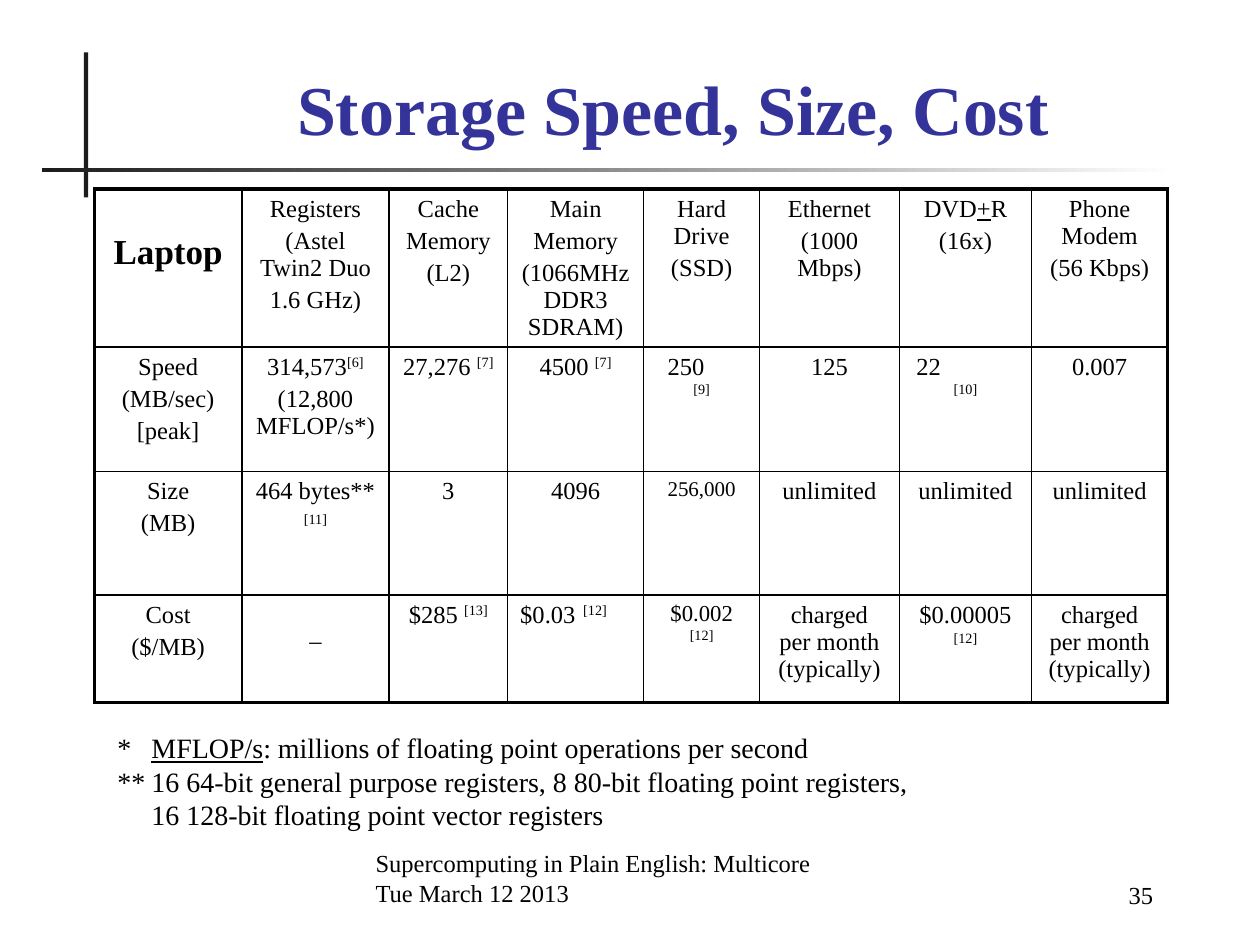
from lxml.etree import SubElement as Sub
from pptx import Presentation
from pptx.dml.color import RGBColor as RGB
from pptx.enum.shapes import MSO_SHAPE as Kind
from pptx.enum.text import MSO_ANCHOR as Anchor, MSO_AUTO_SIZE as Fit, PP_ALIGN as Align
from pptx.oxml.ns import qn
from pptx.util import Pt

INK = RGB(0x00, 0x00, 0x00)
DARK = RGB(0x1C, 0x1C, 0x1C)
BLUE = RGB(0x33, 0x33, 0x99)
WHITE = RGB(0xFF, 0xFF, 0xFF)
FACE = "Times New Roman"

COLS = [84.2, 84.2, 67.7, 77.8, 66.2, 79.9, 75.6, 77.8]
ROWS = [89.3, 71.3, 70.6, 61.2]
THIN, THICK = 1, 2.25


def ref(num):
    """Raised reference mark."""
    return f"[{num}]", {"sup": True}


# A cell is a list of paragraphs; a paragraph is a string or a list of runs,
# where a run is a string or a (text, format) pair.
CELLS = [
    [["Laptop"],
     ["Registers", "(Astel\nTwin2 Duo", "1.6 GHz)"],
     ["Cache", "Memory", "(L2)"],
     ["Main", "Memory", "(1066MHz DDR3 SDRAM)"],
     ["Hard Drive", "(SSD)"],
     ["Ethernet", "(1000 Mbps)"],
     [["DVD", ("+", {"line": True}), "R"], "(16x)"],
     ["Phone Modem", "(56 Kbps)"]],
    [["Speed", "(MB/sec)", "[peak]"],
     [["314,573", ref(6)], "(12,800 MFLOP/s*)"],
     [["27,276 ", ref(7)]],
     [["4500 ", ref(7)]],
     ["250", [ref(9)]],
     ["125"],
     ["22", [ref(10)]],
     ["0.007"]],
    [["Size", "(MB)"],
     ["464 bytes**", [ref(11)]],
     ["3"],
     ["4096"],
     [[("256,000", {"size": 12})]],
     ["unlimited"],
     ["unlimited"],
     ["unlimited"]],
    [["Cost", "($/MB)"],
     ["–"],
     [["$285 ", ref(13)]],
     [["$0.03\t", ref(12)]],
     [[("$0.002", {"size": 13}), "\n", ref(12)]],
     ["charged\nper month\n(typically)"],
     [["$0.00005\n", ref(12)]],
     ["charged per month (typically)"]],
]


def style(font, size, color, bold, line):
    font.name, font.size, font.bold = FACE, Pt(size), bold
    font.underline = line
    font.color.rgb = color


def add_run(para, text, size=14, color=INK, bold=False, line=False, sup=False):
    for i, part in enumerate(text.split("\n")):
        if i:
            para.add_line_break()
        if part:
            run = para.add_run()
            run.text = part
            style(run.font, size, color, bold, line)
            if sup:
                run._r.get_or_add_rPr().set("baseline", "30000")


def write(frame, paras, align=Align.LEFT, gap=0, **form):
    """Fill a text frame with paragraphs in one format."""
    for i, runs in enumerate(paras):
        para = frame.paragraphs[0] if i == 0 else frame.add_paragraph()
        para.alignment = align
        para.space_before = Pt(gap if i else 0)
        style(para.font, form.get("size", 14), INK, False, False)
        for run in [runs] if isinstance(runs, str) else runs:
            text, own = (run, {}) if isinstance(run, str) else run
            add_run(para, text, **{**form, **own})


def indent(para, left, first=0, tab=None):
    props = para._p.get_or_add_pPr()
    props.set("marL", str(Pt(left)))
    props.set("indent", str(Pt(first)))
    if tab:
        stops = props.makeelement(qn("a:tabLst"), {})
        Sub(stops, qn("a:tab"), pos=str(Pt(tab)), algn="l")
        props.find(qn("a:defRPr")).addprevious(stops)


def add_box(slide, x, y, w, h, paras, anchor=Anchor.BOTTOM, **form):
    frame = slide.shapes.add_textbox(Pt(x), Pt(y), Pt(w), Pt(h)).text_frame
    frame.word_wrap = True
    frame.vertical_anchor = anchor
    write(frame, paras, **form)
    return frame


def add_bar(slide, x, y, w, h, fade=False):
    bar = slide.shapes.add_shape(Kind.RECTANGLE, Pt(x), Pt(y), Pt(w), Pt(h))
    bar.shadow.inherit = False
    bar.line.fill.background()
    if fade:
        bar.fill.gradient()
        bar.fill.gradient_angle = 0
        for stop, color in zip(bar.fill.gradient_stops, (DARK, WHITE)):
            stop.color.rgb = color
    else:
        bar.fill.solid()
        bar.fill.fore_color.rgb = DARK


def add_edge(cell, side, width):
    edge = Sub(cell._tc.get_or_add_tcPr(), qn(f"a:ln{side}"), w=str(Pt(width)))
    Sub(Sub(edge, qn("a:solidFill")), qn("a:srgbClr"), val=str(INK))


def add_grid(slide, x, y):
    shape = slide.shapes.add_table(len(ROWS), len(COLS), Pt(x), Pt(y),
                                   Pt(sum(COLS)), Pt(sum(ROWS)))
    table = shape.table
    table.first_row = table.horz_banding = False
    for col, width in zip(table.columns, COLS):
        col.width = Pt(width)
    for row, height in zip(table.rows, ROWS):
        row.height = Pt(height)
    for r, row in enumerate(CELLS):
        for c, paras in enumerate(row):
            cell = table.cell(r, c)
            big = r == c == 0
            write(cell.text_frame, paras, align=Align.CENTER, gap=2.8,
                  size=20 if big else 14, bold=big)
            outer = {"L": c == 0, "R": c == len(COLS) - 1,
                     "T": r == 0, "B": r == len(ROWS) - 1}
            for side, edge in outer.items():
                add_edge(cell, side, THICK if edge else THIN)
            cell.fill.solid()
            cell.fill.fore_color.rgb = WHITE
    return table


def main():
    deck = Presentation()
    deck.slide_width, deck.slide_height = Pt(720), Pt(540)
    slide = deck.slides.add_slide(deck.slide_layouts[5])

    # Crossed rules
    add_bar(slide, 48, 30, 2.4, 82.8)
    add_bar(slide, 24, 96, 648, 2.4, fade=True)

    # Title
    title = slide.shapes.title
    title.left, title.top, title.width, title.height = Pt(78), Pt(36), Pt(613), Pt(53)
    title.text_frame.auto_size = Fit.NONE
    title.text_frame.vertical_anchor = Anchor.BOTTOM
    write(title.text_frame, ["Storage Speed, Size, Cost"], align=Align.CENTER,
          size=40, color=BLUE, bold=True)

    # Table, with the cells that are placed off the common rule
    table = add_grid(slide, 54, 108)
    table.cell(0, 0).margin_top = Pt(25.5)
    table.cell(3, 1).margin_top = Pt(18.5)
    for r, c, left, tab in ((1, 4, 6.5, None), (1, 6, 2.5, None), (3, 3, 0, 49)):
        para = table.cell(r, c).text_frame.paragraphs[0]
        para.alignment = Align.LEFT
        indent(para, left, tab=tab)
    for c in (4, 6):
        table.cell(1, c).text_frame.paragraphs[1].space_before = Pt(0)

    # Footnotes
    notes = add_box(slide, 60, 414, 474, 65.5, [
        ["*\t", ("MFLOP/s", {"line": True}),
         ": millions of floating point operations per second"],
        "**\t16 64-bit general purpose registers, 8 80-bit floating point registers,",
        "16 128-bit floating point vector registers"], anchor=Anchor.TOP, size=16)
    for para, first in zip(notes.paragraphs, (-19.5, -19.5, 0)):
        indent(para, 19.5, first)

    # Footer and slide number
    add_box(slide, 207.5, 486, 314.5, 36,
            ["Supercomputing in Plain English: Multicore", "Tue March 12 2013"])
    add_box(slide, 564, 487.5, 102, 36, ["35"], align=Align.RIGHT)

    deck.save("out.pptx")


if __name__ == "__main__":
    main()
